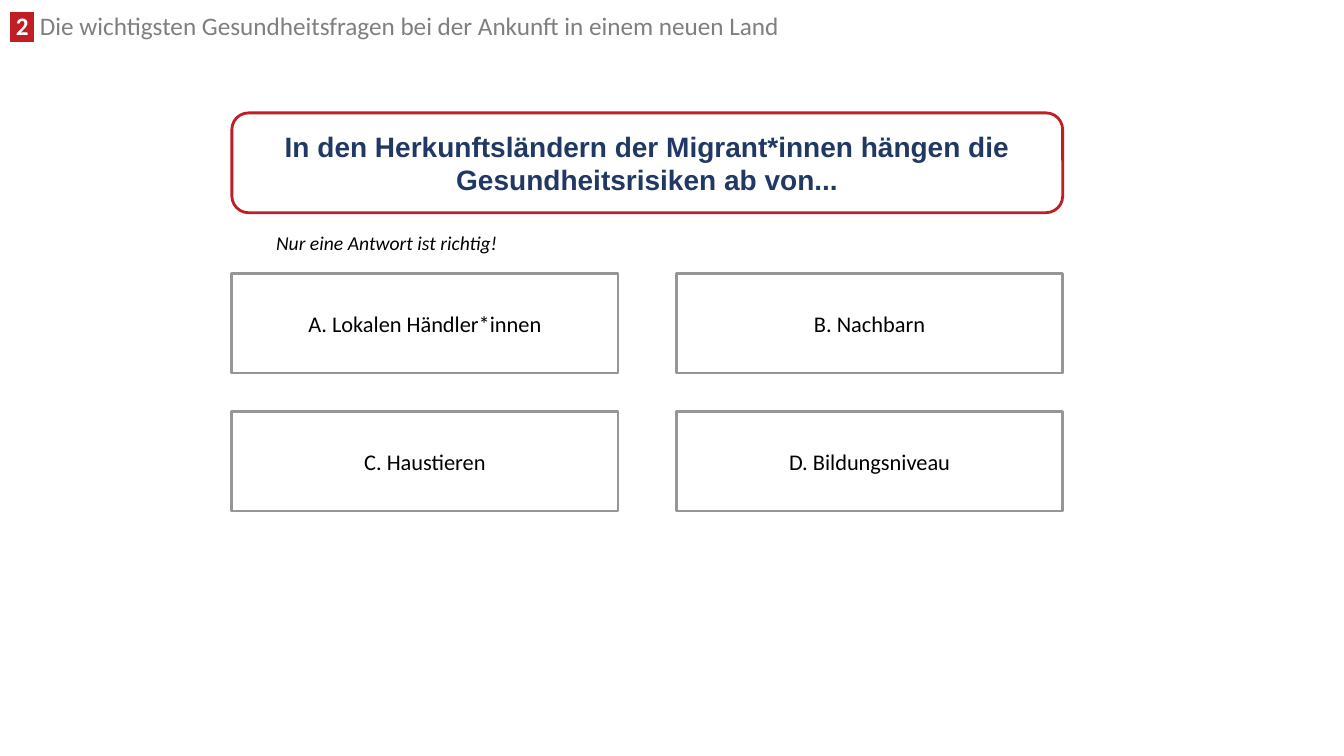
from dataclasses import dataclass, field

from lxml.etree import Element, SubElement
from pptx import Presentation
from pptx.dml.color import RGBColor as RGB
from pptx.enum.shapes import MSO_SHAPE as Shape
from pptx.enum.text import MSO_ANCHOR as Anchor, MSO_AUTO_SIZE as AutoSize, PP_ALIGN as Align
from pptx.oxml.ns import qn
from pptx.util import Inches, Pt

COLORS = {
    "red": "C01E24",
    "navy": "203864",
    "header": "7F7F7F",
    "border": "969696",
    "white": "FFFFFF",
    "black": "000000",
}
LEFT, TOP = 2.3, 2.71
ANSWER_W, BOX_H = 3.83, 0.99
COL_STEP, ROW_STEP = 4.41, 1.37
ANSWERS = ["A. Lokalen Händler*innen", "B. Nachbarn", "C. Haustieren", "D. Bildungsniveau"]


@dataclass
class Box:
    text: str
    left: float
    top: float
    width: float
    kind: Shape = Shape.RECTANGLE
    border: str = "border"
    color: str = "black"
    font: dict = field(default_factory=lambda: {"name": "Calibri", "size": Pt(16), "bold": False})


def rgb(name: str) -> RGB:
    return RGB.from_string(COLORS[name])


def add_run(p, text: str, color: str, font: dict):
    r = p.add_run()
    r.text = text
    r.font.color.rgb = rgb(color)
    for key, value in font.items():
        setattr(r.font, key, value)
    return r


def highlight(r, color: str) -> None:
    """Put a marker colour behind a run, right after its text fill."""
    mark = Element(qn("a:highlight"))
    SubElement(mark, qn("a:srgbClr"), val=COLORS[color])
    r.font._element.find(qn("a:solidFill")).addnext(mark)


def place(sp, left: float, top: float, width: float, height: float) -> None:
    sp.left, sp.top, sp.width, sp.height = map(Inches, (left, top, width, height))


def add_header(s) -> None:
    sp = s.shapes.title
    place(sp, 0, 0.11, 8.57, 0.34)
    tf = sp.text_frame
    tf.word_wrap = True
    tf.auto_size = AutoSize.NONE
    tf.vertical_anchor = Anchor.TOP
    p = tf.paragraphs[0]
    p.alignment = Align.LEFT
    p.line_spacing = 0.8
    font = {"name": "Calibri", "size": Pt(18)}
    number = add_run(p, " 2 ", "white", {**font, "bold": True})
    highlight(number, "red")
    add_run(p, " Die wichtigsten Gesundheitsfragen bei der Ankunft in einem neuen Land",
            "header", {**font, "bold": False})


def add_box(s, box: Box) -> None:
    sp = s.shapes.add_shape(box.kind, *map(Inches, (box.left, box.top, box.width, BOX_H)))
    sp.shadow.inherit = False
    sp.fill.solid()
    sp.fill.fore_color.rgb = rgb("white")
    sp.line.color.rgb = rgb(box.border)
    sp.line.width = Pt(2)
    tf = sp.text_frame
    tf.word_wrap = True
    tf.vertical_anchor = Anchor.MIDDLE
    p = tf.paragraphs[0]
    p.alignment = Align.CENTER
    add_run(p, box.text, box.color, box.font)


def add_hint(s) -> None:
    sp = s.shapes.add_textbox(*map(Inches, (2.64, 2.24, 2.57, 0.34)))
    tf = sp.text_frame
    tf.word_wrap = True
    add_run(tf.paragraphs[0], "Nur eine Antwort ist richtig!", "black",
            {"name": "Calibri", "size": Pt(14), "italic": True})


def main() -> None:
    prs = Presentation()
    prs.slide_width, prs.slide_height = Inches(13.33), Inches(7.5)
    s = prs.slides.add_slide(prs.slide_layouts[5])
    add_header(s)
    add_box(s, Box(
        "In den Herkunftsländern der Migrant*innen hängen die Gesundheitsrisiken ab von...",
        LEFT, 1.12, COL_STEP + ANSWER_W, Shape.ROUNDED_RECTANGLE, "red", "navy",
        {"name": "Arial", "size": Pt(20), "bold": True},
    ))
    add_hint(s)
    for i, answer in enumerate(ANSWERS):
        row, col = divmod(i, 2)
        add_box(s, Box(answer, LEFT + col * COL_STEP, TOP + row * ROW_STEP, ANSWER_W))
    prs.save("out.pptx")


if __name__ == "__main__":
    main()
